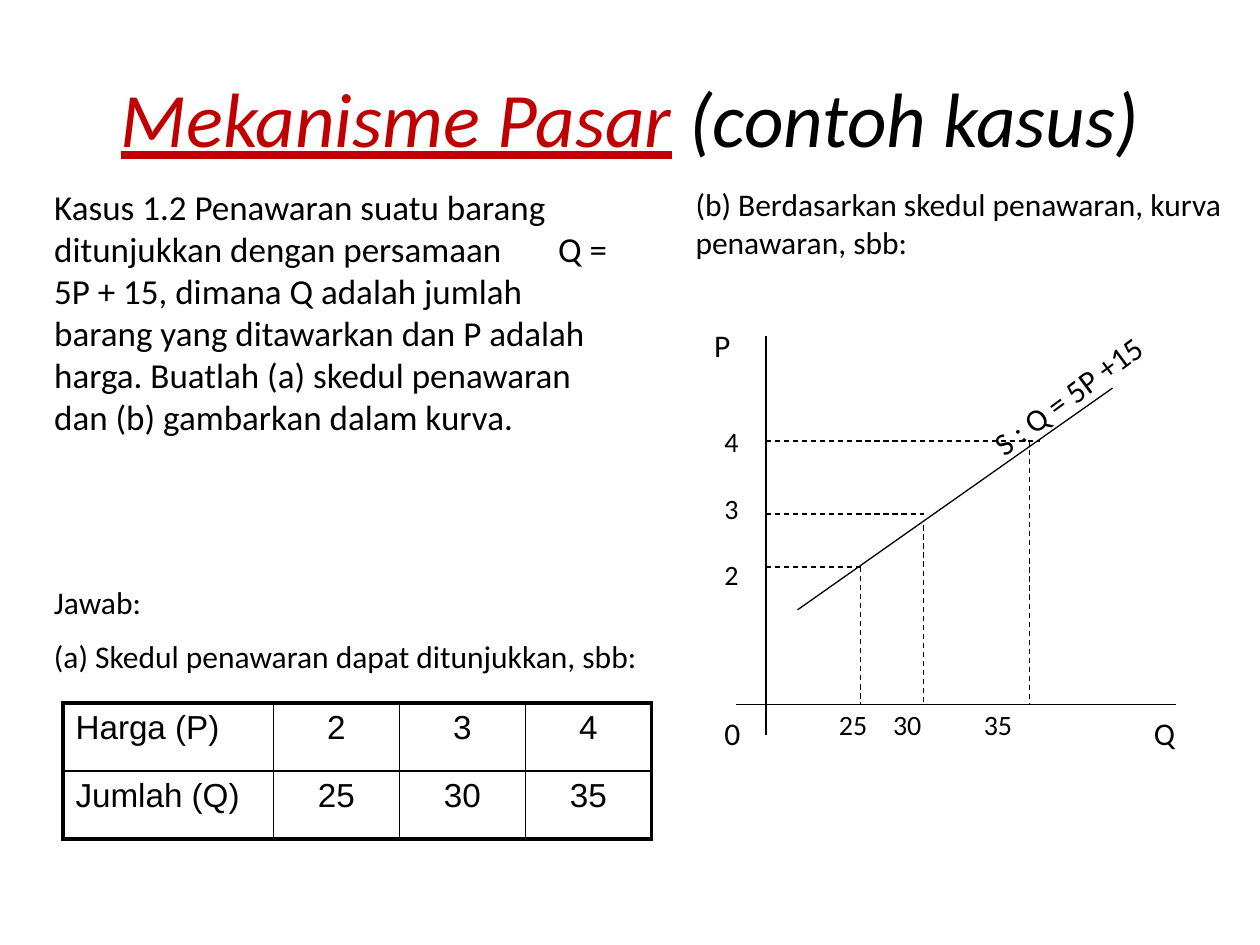
"""Build the market mechanism slide with a supply schedule and a supply curve."""
from lxml.etree import SubElement
from pptx import Presentation
from pptx.dml.color import RGBColor
from pptx.enum.dml import MSO_LINE
from pptx.enum.shapes import MSO_CONNECTOR
from pptx.enum.text import MSO_ANCHOR, MSO_AUTO_SIZE, PP_ALIGN
from pptx.oxml.ns import qn
from pptx.util import Inches, Pt

BLACK = RGBColor(0, 0, 0)
RED = RGBColor(0xC0, 0, 0)
THIN, THICK = Pt(1), Pt(2.25)


def write(para, text, size=18, font="Calibri", color=BLACK, italic=None,
          underline=None, align=PP_ALIGN.LEFT, before=0):
    para.alignment = align
    para.space_before = Pt(before)
    span = para.add_run()
    span.text = text
    span.font.size = Pt(size)
    span.font.name = font
    span.font.color.rgb = color
    span.font.italic = italic
    span.font.underline = underline


def add_line(start, end, dashed=False):
    line = page.shapes.add_connector(
        MSO_CONNECTOR.STRAIGHT, *[Inches(value) for value in (*start, *end)])
    line.line.color.rgb = BLACK
    line.line.width = Pt(0.75)
    if dashed:
        line.line.dash_style = MSO_LINE.DASH
    SubElement(line._element.spPr, qn("a:effectLst"))


deck = Presentation()
deck.slide_width, deck.slide_height = Inches(10), Inches(7.5)
page = deck.slides.add_slide(deck.slide_layouts[3])
title, case_body, curve_body = page.placeholders

title.left, title.top = Inches(0.5), Inches(0.3)
title.width, title.height = Inches(9), Inches(1.25)
title.text_frame.vertical_anchor = MSO_ANCHOR.MIDDLE
heading = title.text_frame.paragraphs[0]
for text, color, underline in [("Mekanisme Pasar", RED, True),
                               (" (contoh kasus)", BLACK, False)]:
    write(heading, text, size=44, color=color, italic=True,
          underline=underline, align=PP_ALIGN.CENTER)

case_text = (
    "Kasus 1.2 Penawaran suatu barang ditunjukkan dengan persamaan \tQ = 5P + 15, "
    "dimana Q adalah jumlah barang yang ditawarkan dan P adalah harga. "
    "Buatlah (a) skedul penawaran dan (b) gambarkan dalam kurva.")
curve_text = "(b) Berdasarkan skedul penawaran, kurva penawaran, sbb:"
for body, left, width, height, text, size in [
        (case_body, 0.33, 4.75, 2.12, case_text, 20),
        (curve_body, 5.42, 4.42, 5.47, curve_text, 18)]:
    body.left, body.top = Inches(left), Inches(1.42)
    body.width, body.height = Inches(width), Inches(height)
    body.text_frame.auto_size = MSO_AUTO_SIZE.NONE
    para = body.text_frame.paragraphs[0]
    write(para, text, size=size)
    properties = para._p.get_or_add_pPr()
    properties.set("marL", "0")
    properties.set("indent", "0")
    SubElement(properties, qn("a:buNone"))
    if "\t" in text:
        tabs = SubElement(properties, qn("a:tabLst"))
        SubElement(tabs, qn("a:tab"), pos=str(Inches(4.31)), algn="l")

answer = page.shapes.add_textbox(Inches(0.33), Inches(4.58), Inches(5), Inches(0.86))
answer.text_frame.word_wrap = True
write(answer.text_frame.paragraphs[0], "Jawab:")
write(answer.text_frame.add_paragraph(),
      "(a) Skedul penawaran dapat ditunjukkan, sbb:", before=9)

schedule = [["Harga (P)", "2", "3", "4"], ["Jumlah (Q)", "25", "30", "35"]]
table = page.shapes.add_table(
    2, 4, Inches(0.5), Inches(5.58), Inches(4.67), Inches(1.08)).table
table.first_row = table.horz_banding = False
for column, width in zip(table.columns, [1.67, 1, 1, 1]):
    column.width = Inches(width)
for row, values in enumerate(schedule):
    table.rows[row].height = Inches(0.54)
    for column, value in enumerate(values):
        cell = table.cell(row, column)
        write(cell.text_frame.paragraphs[0], value, size=19, font="Arial",
              align=PP_ALIGN.CENTER if column else PP_ALIGN.LEFT)
        properties = cell._tc.get_or_add_tcPr()
        for side, outer in [("L", column == 0), ("R", column == 3),
                            ("T", row == 0), ("B", row == 1)]:
            border = SubElement(properties, qn(f"a:ln{side}"),
                                w=str(THICK if outer else THIN))
            fill = SubElement(border, qn("a:solidFill"))
            SubElement(fill, qn("a:srgbClr"), val=str(BLACK))
        cell.fill.background()

axis_x, axis_y = 6.08, 5.59
add_line((axis_x, 2.67), (axis_x, 5.83))
add_line((5.84, axis_y), (9.33, axis_y))
add_line((6.33, 4.84), (8.83, 3.08))
for x, y, right, top in [(6.83, 4.5, 6.83, 4.5), (7.33, 4.08, 7.33, 4.17),
                         (8.17, 3.5, 8.25, 3.5)]:
    add_line((axis_x, y), (right, y), dashed=True)
    add_line((x, top), (x, axis_y), dashed=True)

labels = [("P", 5.57, 2.54, 0.38, 18, 0), ("0", 5.65, 5.62, 0.35, 18, 0),
          ("Q", 9.06, 5.62, 0.41, 18, 0),
          ("S : Q = 5P +15", 7.65, 2.83, 1.95, 18, 323.6)]
labels += [(price, 5.65, 3.32 + 0.53 * step, 0.32, 16, 0)
           for step, price in enumerate("432")]
labels += [(quantity, left, 5.57, 0.43, 16, 0)
           for quantity, left in [("25", 6.56), ("30", 6.99), ("35", 7.71)]]
for text, left, top, width, size, angle in labels:
    height = 0.42 if size == 18 else 0.37
    box = page.shapes.add_textbox(
        Inches(left), Inches(top), Inches(width), Inches(height))
    box.rotation = angle
    box.text_frame.word_wrap = False
    write(box.text_frame.paragraphs[0], text, size=size)

deck.save("out.pptx")
